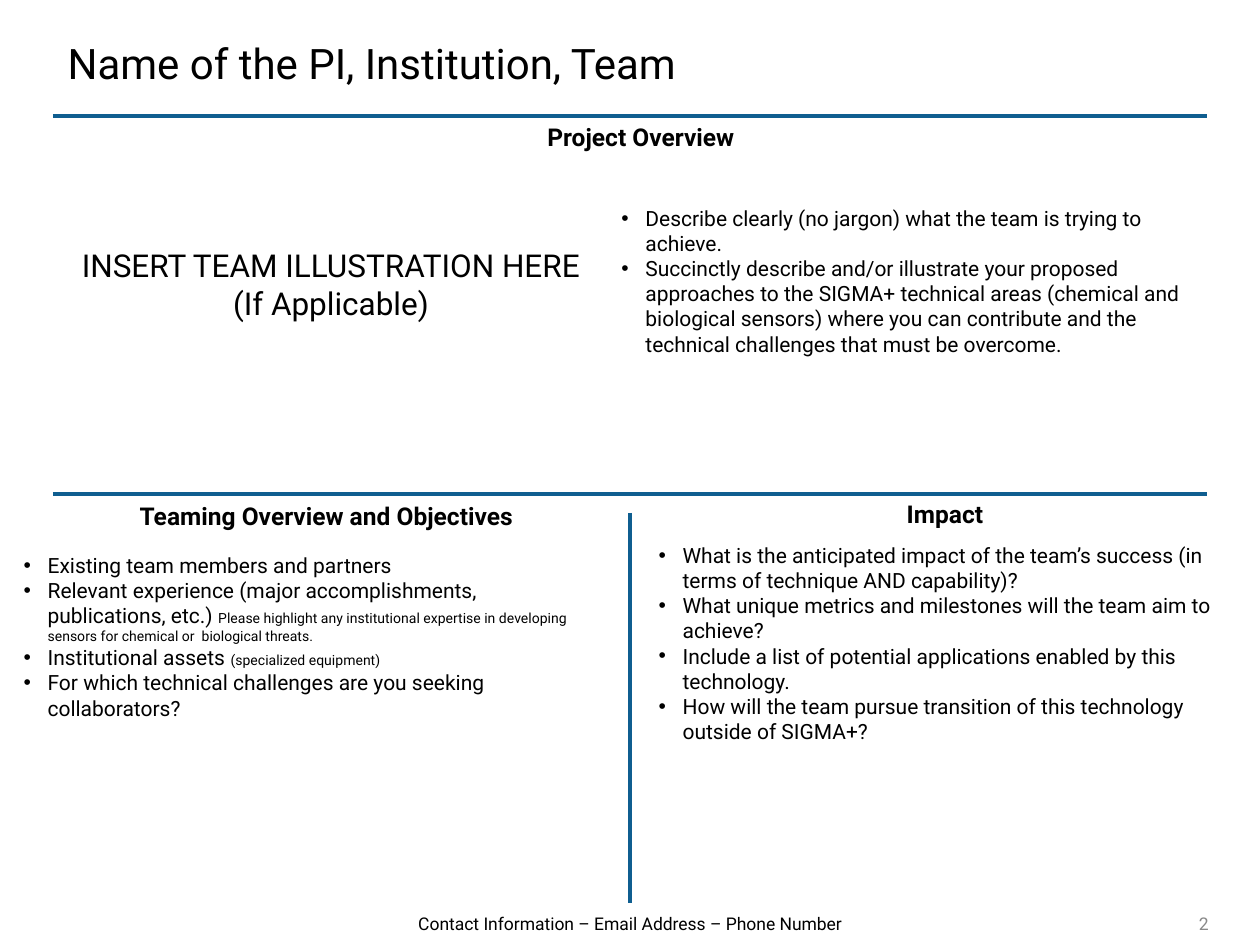
"""Build a one-page team profile slide with overview, teaming and impact sections."""
from lxml import etree
from pptx import Presentation
from pptx.dml.color import RGBColor
from pptx.enum.shapes import MSO_CONNECTOR
from pptx.enum.text import MSO_ANCHOR, MSO_AUTO_SIZE, PP_ALIGN
from pptx.oxml.ns import qn
from pptx.util import Emu, Pt

LEFT, CENTER, RIGHT = PP_ALIGN.LEFT, PP_ALIGN.CENTER, PP_ALIGN.RIGHT
TOP, MIDDLE = MSO_ANCHOR.TOP, MSO_ANCHOR.MIDDLE
NO_AUTOFIT = MSO_AUTO_SIZE.NONE
STRAIGHT = MSO_CONNECTOR.STRAIGHT
PX = 914400 / 126
NOTE_SIZE = 8
INDENT = 24


def px(*lengths):
    return [Emu(round(length * PX)) for length in lengths]


def write(shape, box, paragraphs, size=12, bold=False, color="000000",
          align=LEFT, anchor=TOP, bullet=False):
    shape.left, shape.top, shape.width, shape.height = px(*box)
    frame = shape.text_frame
    frame.word_wrap = True
    frame.auto_size = NO_AUTOFIT
    frame.vertical_anchor = anchor
    for number, (text, note) in enumerate(paragraphs):
        paragraph = frame.paragraphs[0] if number == 0 else frame.add_paragraph()
        paragraph.alignment = align
        paragraph.space_before = Pt(0)
        if bullet:
            properties = paragraph._p.get_or_add_pPr()
            indent = px(INDENT)[0]
            properties.set("marL", str(indent))
            properties.set("indent", str(-indent))
            etree.SubElement(properties, qn("a:buFont")).set("typeface", "Arial")
            etree.SubElement(properties, qn("a:buChar")).set("char", "•")
        for words, points in ((text, size), (note, NOTE_SIZE)):
            if words:
                run = paragraph.add_run()
                run.text = words
                run.font.name = "Roboto"
                run.font.size = Pt(points)
                run.font.bold = bold
                run.font.color.rgb = RGBColor.from_string(color)


deck = Presentation()
deck.slide_width, deck.slide_height = px(1260, 945)
slide = deck.slides.add_slide(deck.slide_layouts[4])
title, teaming_heading, teaming_list, impact_heading, impact_list = slide.placeholders
overview_heading, overview_list, illustration, contact, page_number = [
    slide.shapes.add_textbox(0, 0, 0, 0) for _ in range(5)]

for ends in ((53, 116, 1207, 116), (53, 494, 1207, 494), (630, 513, 630, 903)):
    divider = slide.shapes.add_connector(STRAIGHT, *px(*ends))
    divider.line.color.rgb = RGBColor.from_string("0F5E90")
    divider.line.width = Pt(1.75)
    etree.SubElement(divider._element.spPr, qn("a:effectLst"))

write(title, (55, 21, 984, 84), [("Name of the PI, Institution, Team", "")],
      size=24, anchor=MIDDLE)

for heading, box, text in (
    (overview_heading, (326, 116, 630, 43), "Project Overview"),
    (teaming_heading, (72, 495, 509, 43), "Teaming Overview and Objectives"),
    (impact_heading, (630, 493, 630, 43), "Impact"),
):
    write(heading, box, [(text, "")], size=14, bold=True, align=CENTER)

for bullets, box, items in (
    (overview_list, (609, 199, 599, 165), [
        ("Describe clearly (no jargon) what the team is trying to achieve.", ""),
        ("Succinctly describe and/or illustrate your proposed approaches to the "
         "SIGMA+ technical areas (chemical and biological sensors) where you can "
         "contribute and the technical challenges that must be overcome.", ""),
    ]),
    (teaming_list, (11, 546, 599, 183), [
        ("Existing team members and partners", ""),
        ("Relevant experience (major accomplishments, publications, etc.) ",
         "Please highlight any institutional expertise in developing sensors "
         "for chemical or  biological threats."),
        ("Institutional assets ", "(specialized equipment)"),
        ("For which technical challenges are you seeking collaborators?", ""),
    ]),
    (impact_list, (646, 536, 599, 217), [
        ("What is the anticipated impact of the team’s success "
         "(in terms of technique AND capability)?", ""),
        ("What unique metrics and milestones will the team aim to achieve?", ""),
        ("Include a list of potential applications enabled by this technology.", ""),
        ("How will the team pursue transition of this technology "
         "outside of SIGMA+?", ""),
    ]),
):
    write(bullets, box, items, bullet=True)

write(illustration, (16, 240, 630, 89),
      [("INSERT TEAM ILLUSTRATION HERE", ""), ("(If Applicable)", "")],
      size=18, align=CENTER)
write(contact, (184, 903, 892, 41),
      [("Contact Information – Email Address – Phone Number", "")],
      size=10, align=CENTER, anchor=MIDDLE)
write(page_number, (1116, 903, 105, 41), [("2", "")],
      size=10, color="898989", align=RIGHT, anchor=MIDDLE)

deck.save("out.pptx")
